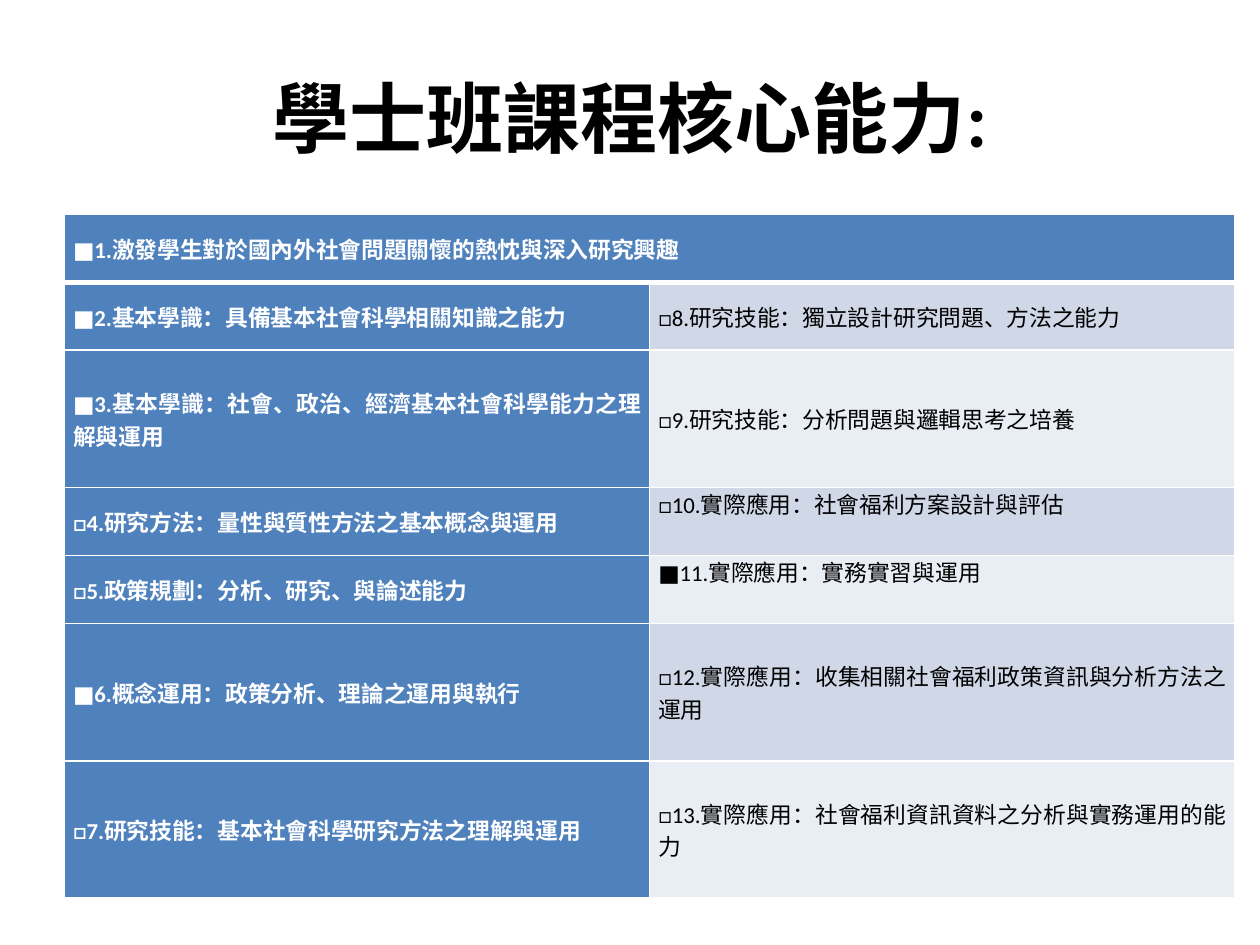
from dataclasses import dataclass

from lxml.etree import SubElement
from pptx import Presentation
from pptx.dml.color import RGBColor as RGB
from pptx.enum.text import MSO_ANCHOR as Anchor, PP_ALIGN as Align
from pptx.oxml.ns import qn
from pptx.slide import Slide
from pptx.table import Table, _Cell as Cell
from pptx.text.text import TextFrame
from pptx.util import Inches, Pt


@dataclass(frozen=True)
class Theme:
    font: str = "Calibri"
    title_size: int = 44
    cell_size: int = 13
    black: str = "000000"
    white: str = "FFFFFF"
    blue: str = "4F81BD"
    bands: tuple[str, str] = ("D0D8E8", "E9EDF4")
    thin: int = 1
    thick: int = 3


@dataclass(frozen=True)
class Row:
    height: float
    left: str
    right: str = ""
    right_at_top: bool = False


THEME = Theme()
SINGLE, DOUBLE = 0.54, 1.09
ROWS = [
    Row(SINGLE, "■1.激發學生對於國內外社會問題關懷的熱忱與深入研究興趣"),
    Row(SINGLE, "■2.基本學識：具備基本社會科學相關知識之能力",
        "□8.研究技能：獨立設計研究問題、方法之能力"),
    Row(DOUBLE, "■3.基本學識：社會、政治、經濟基本社會科學能力之理解與運用",
        "□9.研究技能：分析問題與邏輯思考之培養"),
    Row(SINGLE, "□4.研究方法：量性與質性方法之基本概念與運用",
        "□10.實際應用：社會福利方案設計與評估", right_at_top=True),
    Row(SINGLE, "□5.政策規劃：分析、研究、與論述能力",
        "■11.實際應用：實務實習與運用", right_at_top=True),
    Row(DOUBLE, "■6.概念運用：政策分析、理論之運用與執行",
        "□12.實際應用：收集相關社會福利政策資訊與分析方法之運用"),
    Row(DOUBLE, "□7.研究技能：基本社會科學研究方法之理解與運用",
        "□13.實際應用：社會福利資訊資料之分析與實務運用的能力"),
]


def write(tf: TextFrame, text: str, size: int, color: str, bold: bool, align: Align) -> None:
    p = tf.paragraphs[0]
    p.alignment = align
    r = p.add_run()
    r.text = text
    r.font.name = THEME.font
    r.font.size = Pt(size)
    r.font.bold = bold
    r.font.color.rgb = RGB.from_string(color)


def set_borders(cell: Cell, top: int, bottom: int) -> None:
    """Draw white borders; call before the fill, which must follow them in the XML."""
    tc_pr = cell._tc.get_or_add_tcPr()
    widths = {"lnL": THEME.thin, "lnR": THEME.thin, "lnT": top, "lnB": bottom}
    for tag, width in widths.items():
        ln = SubElement(tc_pr, qn(f"a:{tag}"), w=str(Pt(width)))
        SubElement(SubElement(ln, qn("a:solidFill")), qn("a:srgbClr"), val=THEME.white)


def style_cell(cell: Cell, fill: str, row: int) -> None:
    set_borders(cell, THEME.thick if row == 1 else THEME.thin,
                THEME.thick if row == 0 else THEME.thin)
    cell.fill.solid()
    cell.fill.fore_color.rgb = RGB.from_string(fill)
    cell.margin_left = cell.margin_right = Inches(0.07)
    cell.margin_top = cell.margin_bottom = 0
    cell.vertical_anchor = Anchor.MIDDLE


def fill_row(table: Table, i: int, row: Row) -> None:
    table.rows[i].height = Inches(row.height)
    left, right = table.cell(i, 0), table.cell(i, 1)
    style_cell(left, THEME.blue, i)
    style_cell(right, THEME.bands[(i - 1) % 2] if row.right else THEME.blue, i)
    write(left.text_frame, row.left, THEME.cell_size, THEME.white, True, Align.JUSTIFY)
    if not row.right:
        left.merge(right)
        return
    if row.right_at_top:
        right.vertical_anchor = Anchor.TOP
    write(right.text_frame, row.right, THEME.cell_size, THEME.black, False,
          Align.LEFT if row.right_at_top else Align.JUSTIFY)


def add_title(s: Slide, text: str) -> None:
    sp = s.shapes.add_textbox(Inches(0.5), Inches(0.3), Inches(9), Inches(1.25))
    tf = sp.text_frame
    tf.word_wrap = True
    tf.vertical_anchor = Anchor.MIDDLE
    write(tf, text, THEME.title_size, THEME.black, True, Align.CENTER)


def add_abilities(s: Slide, rows: list[Row]) -> None:
    height = sum(row.height for row in rows)
    table = s.shapes.add_table(len(rows), 2, Inches(0.51), Inches(1.7),
                               Inches(9.29), Inches(height)).table
    for i, row in enumerate(rows):
        fill_row(table, i, row)


def main() -> None:
    prs = Presentation()
    prs.slide_width, prs.slide_height = Inches(10), Inches(7.5)
    s = prs.slides.add_slide(prs.slide_layouts[6])
    add_title(s, "學士班課程核心能力:")
    add_abilities(s, ROWS)
    prs.save("out.pptx")


if __name__ == "__main__":
    main()
